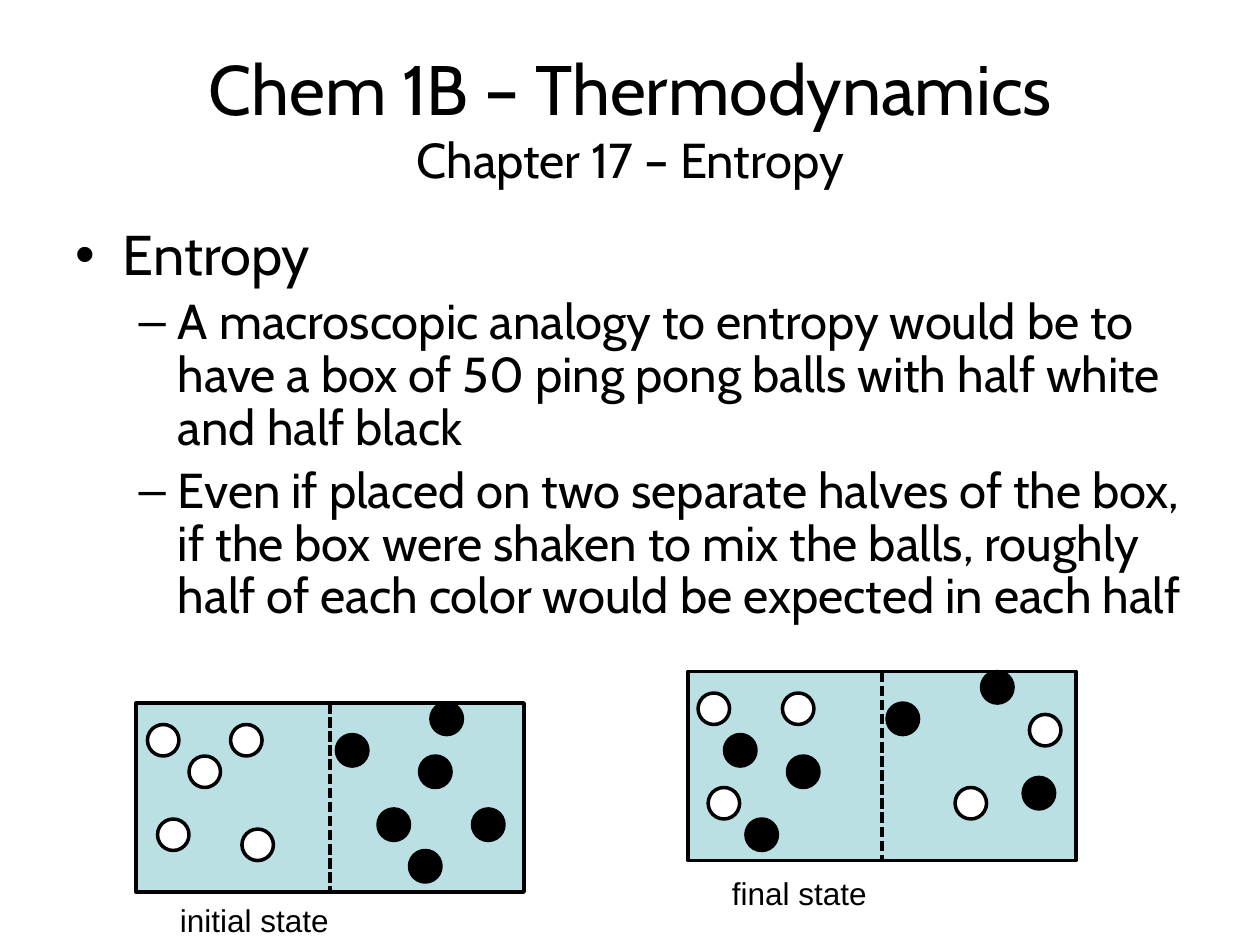
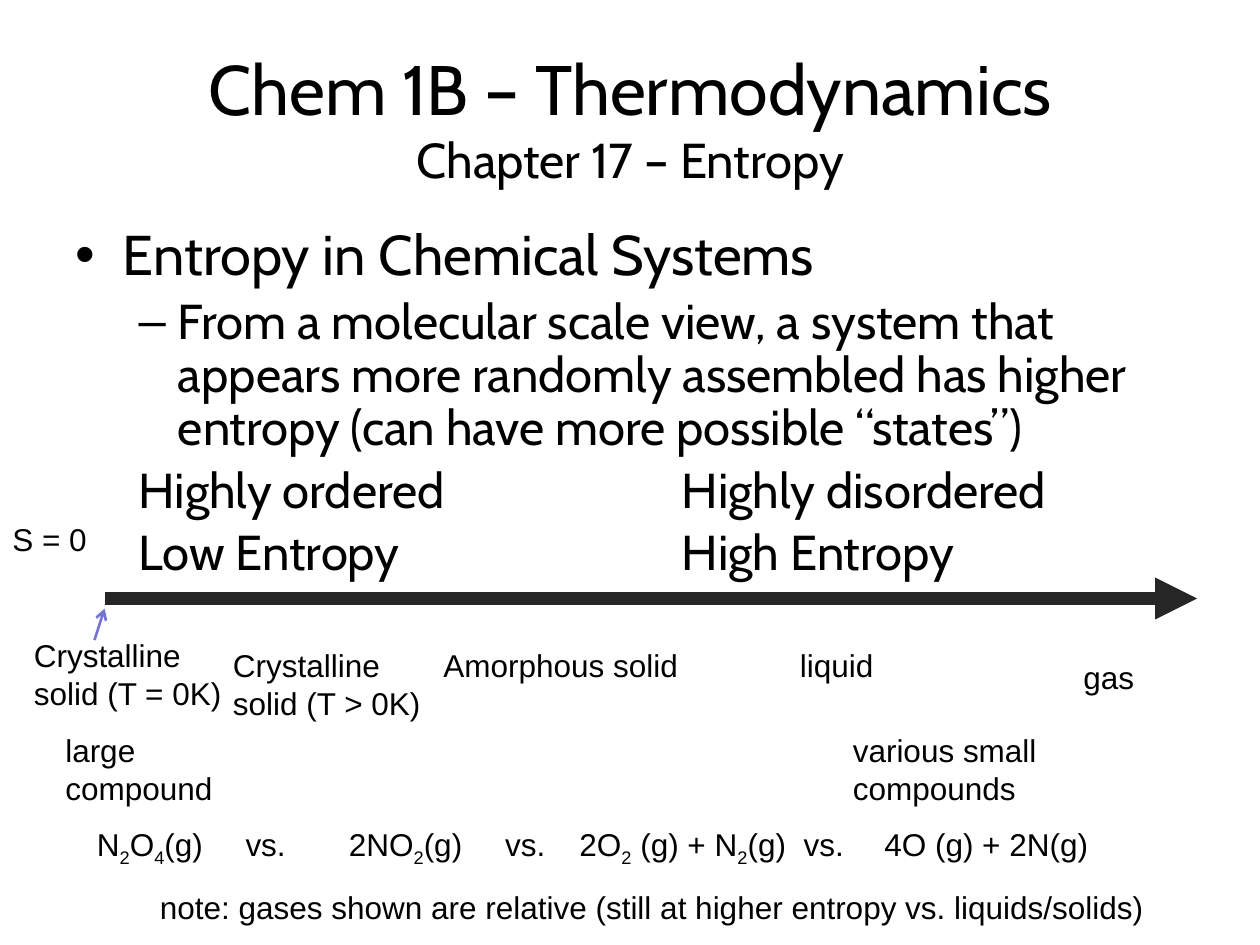
from lxml.etree import SubElement
from pptx import Presentation
from pptx.dml.color import RGBColor
from pptx.enum.dml import MSO_LINE
from pptx.enum.shapes import MSO_CONNECTOR, MSO_SHAPE
from pptx.enum.text import MSO_ANCHOR, MSO_AUTO_SIZE, PP_ALIGN
from pptx.oxml.ns import qn
from pptx.util import Inches, Pt

COLORS = {
    "black": "000000",
    "white": "FFFFFF",
    "box": "BBE0E3",
    "scale": "262626",
    "pointer": "7575D1",
}
TITLE_FORMAT = {"name": "Cabin", "size": Pt(40)}
SUBTITLE_FORMAT = {"name": "Cabin", "size": Pt(28)}
LEVEL_FORMATS = [{"name": "Cabin", "size": Pt(32)}, {"name": "Cabin", "size": Pt(28)}]
LABEL_FORMAT = {"name": "Arial", "size": Pt(18)}
BALL_SIZE = 0.25
BOX_WIDTH, BOX_HEIGHT = 3.08, 1.5


def color(name):
    return RGBColor.from_string(COLORS[name])


def apply_format(item, values):
    for name, value in values.items():
        setattr(item, name, value)


def add_span(para, text, values):
    span = para.add_run()
    span.text = text
    apply_format(span.font, values)
    span.font.color.rgb = color("black")
    return span


def place(shape, left, top, width, height):
    apply_format(shape, {"left": Inches(left), "top": Inches(top),
                         "width": Inches(width), "height": Inches(height)})


# Title and list placeholders
def add_page(deck, points, body_height):
    """Add a page with the shared title and a list of (level, bulleted, text)."""
    page = deck.slides.add_slide(deck.slide_layouts[1])
    title = page.shapes.title
    place(title, 0.5, 0.3, 9, 1.25)
    apply_format(title.text_frame, {"auto_size": MSO_AUTO_SIZE.NONE,
                                    "vertical_anchor": MSO_ANCHOR.MIDDLE})
    para = title.text_frame.paragraphs[0]
    para.alignment = PP_ALIGN.CENTER
    add_span(para, "Chem 1B – Thermodynamics", TITLE_FORMAT)
    para.add_line_break()
    SubElement(para._p.find(qn("a:br")), qn("a:rPr"), sz="4000")
    add_span(para, "Chapter 17 – Entropy", SUBTITLE_FORMAT)

    body = page.placeholders[1]
    place(body, 0.5, 1.75, 9, body_height)
    frame = body.text_frame
    frame.auto_size = MSO_AUTO_SIZE.NONE
    for index, (level, bulleted, text) in enumerate(points):
        para = frame.add_paragraph() if index else frame.paragraphs[0]
        apply_format(para, {"level": level, "line_spacing": 0.9})
        if not bulleted:
            properties = para._p.get_or_add_pPr()
            properties.set("defTabSz", str(Inches(1)))
            SubElement(properties, qn("a:buNone"))
        add_span(para, text, LEVEL_FORMATS[level])
    return page


# Labels: "_" before a digit lowers it, tab is the stop for text after "\t"
def add_label(page, left, top, width, text, lines=1, tab=None):
    height = 0.71 if lines == 2 else 0.4
    box = page.shapes.add_textbox(Inches(left), Inches(top), Inches(width), Inches(height))
    frame = box.text_frame
    apply_format(frame, {"word_wrap": True, "auto_size": MSO_AUTO_SIZE.SHAPE_TO_FIT_TEXT})
    for index, line in enumerate(text.split("\n")):
        para = frame.add_paragraph() if index else frame.paragraphs[0]
        if tab:
            stops = SubElement(para._p.get_or_add_pPr(), qn("a:tabLst"))
            SubElement(stops, qn("a:tab"), pos=str(Inches(tab)), algn="l")
        first, *others = line.split("_")
        add_span(para, first, LABEL_FORMAT)
        for part in others:
            lowered = add_span(para, part[0], LABEL_FORMAT)
            lowered.font._element.set("baseline", "-25000")
            add_span(para, part[1:], LABEL_FORMAT)


# Shapes and lines
def add_outlined(page, kind, left, top, width, height, fill):
    shape = page.shapes.add_shape(kind, Inches(left), Inches(top),
                                  Inches(width), Inches(height))
    shape.shadow.inherit = False
    shape.fill.solid()
    shape.fill.fore_color.rgb = color(fill)
    shape.line.color.rgb = color("black")
    shape.line.width = Pt(2)


def add_line(page, start, end, line_color, width, dash=None, head=None):
    line = page.shapes.add_connector(MSO_CONNECTOR.STRAIGHT,
                                     *map(Inches, start), *map(Inches, end))
    line.line.color.rgb = color(line_color)
    line.line.width = Pt(width)
    if dash:
        line.line.dash_style = dash
    if head:
        SubElement(line.line._get_or_add_ln(), qn("a:tailEnd"), type=head)
    SubElement(line._element.spPr, qn("a:effectLst"))


def add_state(page, left, top, white_balls, black_balls, label):
    """Draw a divided box with its balls and caption."""
    add_outlined(page, MSO_SHAPE.RECTANGLE, left, top, BOX_WIDTH, BOX_HEIGHT, "box")
    middle = left + BOX_WIDTH / 2
    add_line(page, (middle, top), (middle, top + BOX_HEIGHT), "black", 2,
             dash=MSO_LINE.SQUARE_DOT)
    for fill, balls in (("white", white_balls), ("black", black_balls)):
        for x, y in balls:
            add_outlined(page, MSO_SHAPE.OVAL, x, y, BALL_SIZE, BALL_SIZE, fill)
    add_label(page, left + 0.25, top + BOX_HEIGHT + 0.05 - 0.03 + 0.04 * (top < 5.5),
              2.25, label)


def add_analogy_page(deck):
    page = add_page(deck, [
        (0, True, "Entropy"),
        (1, True, "A macroscopic analogy to entropy would be to have a box of 50 "
                  "ping pong balls with half white and half black"),
        (1, True, "Even if placed on two separate halves of the box, if the box were "
                  "shaken to mix the balls, roughly half of each color would be "
                  "expected in each half"),
    ], 3.67)
    add_state(page, 1.08, 5.58,
              [(1.83, 5.75), (1.17, 5.75), (1.92, 6.58), (1.5, 6), (1.25, 6.5)],
              [(2.67, 5.83), (3.42, 5.58), (3, 6.42), (3.33, 6), (3.75, 6.42), (3.25, 6.75)],
              "initial state")
    add_state(page, 5.46, 5.33,
              [(6.21, 5.5), (5.54, 5.5), (7.58, 6.25), (8.17, 5.67), (5.62, 6.25)],
              [(7.04, 5.58), (7.79, 5.33), (5.75, 5.83), (6.25, 6), (8.12, 6.17), (5.92, 6.5)],
              "final state")


def add_systems_page(deck):
    page = add_page(deck, [
        (0, True, "Entropy in Chemical Systems"),
        (1, True, "From a molecular scale view, a system that appears more randomly "
                  "assembled has higher entropy (can have more possible “states”)"),
        (1, False, "Highly ordered\t\tHighly disordered"),
        (1, False, "Low Entropy\t\t\tHigh Entropy"),
    ], 2.92)
    # Entropy scale
    add_line(page, (0.83, 4.75), (9.5, 4.75), "scale", 8, head="triangle")
    add_line(page, (0.75, 5.08), (0.83, 4.83), "pointer", 1.5, head="arrow")
    add_label(page, 0, 4.08, 0.92, "S = 0")
    # States of matter
    add_label(page, 0.17, 5, 2.08, "Crystalline\nsolid (T = 0K)", lines=2)
    add_label(page, 1.75, 5.08, 1.75, "Crystalline\nsolid (T > 0K)", lines=2)
    add_label(page, 3.42, 5.08, 2.08, "Amorphous solid")
    add_label(page, 6.25, 5.08, 0.83, "liquid")
    add_label(page, 8.5, 5.17, 0.92, "gas")
    # Compounds from large to small
    add_label(page, 0.42, 5.75, 1.67, "large compound", lines=2)
    add_label(page, 6.67, 5.75, 2.17, "various small compounds", lines=2)
    for left, width, text, tab in (
        (0.67, 2.08, "N_2O_4(g)\tvs.", 1.18),
        (2.67, 2.08, "2NO_2(g)\tvs.", 1.24),
        (4.5, 2.42, "2O_2 (g) + N_2(g)\tvs.", 1.78),
        (6.92, 2.42, "4O (g) + 2N(g)", None),
    ):
        add_label(page, left, 6.5, width, text, tab=tab)
    add_label(page, 1.17, 7, 8.25,
              "note: gases shown are relative (still at higher entropy vs. liquids/solids)")


def main():
    deck = Presentation()
    deck.slide_width, deck.slide_height = Inches(10), Inches(7.5)
    add_analogy_page(deck)
    add_systems_page(deck)
    deck.save("out.pptx")


main()
